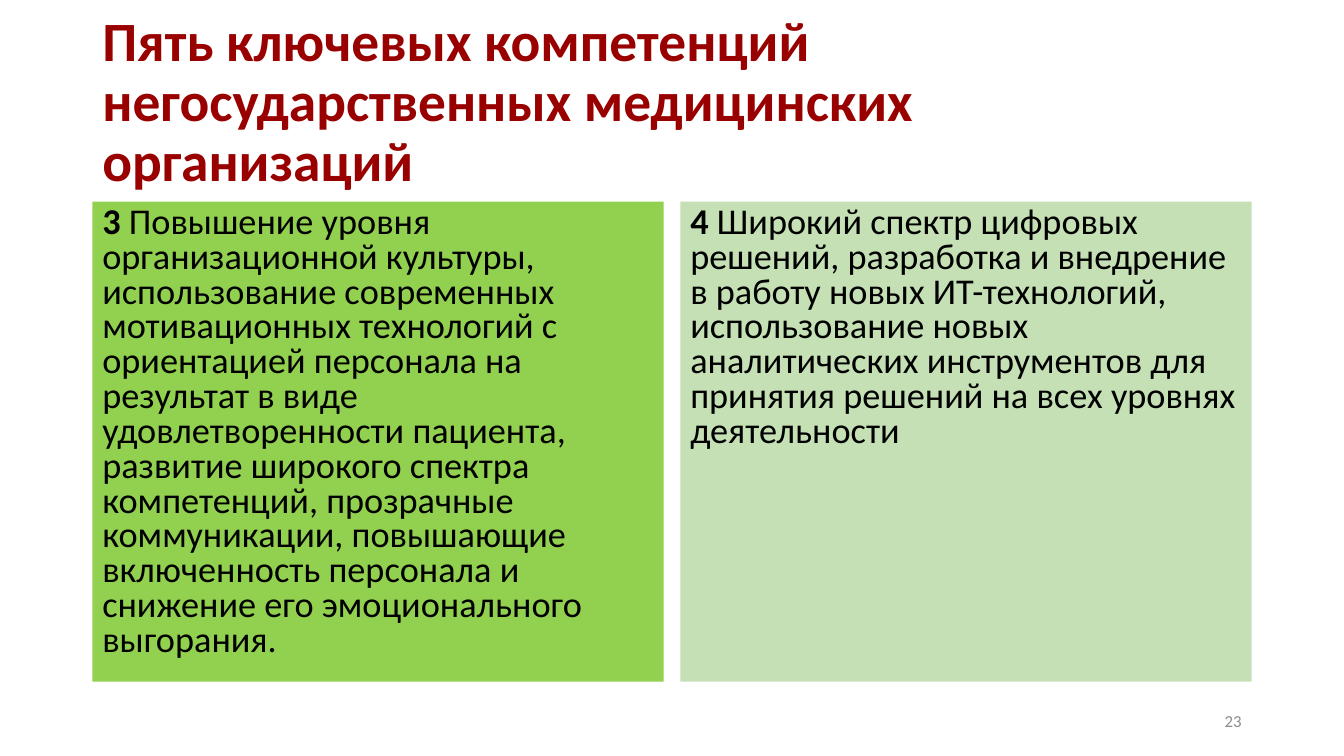
from dataclasses import dataclass
from typing import Optional

import pptx
import pptx.dml.color
import pptx.enum.shapes
import pptx.enum.text
import pptx.util

Pt = pptx.util.Pt
RGBColor = pptx.dml.color.RGBColor
Anchor = pptx.enum.text.MSO_ANCHOR
Align = pptx.enum.text.PP_ALIGN

DARK_RED = RGBColor(0x99, 0x00, 0x00)
BLACK = RGBColor(0x00, 0x00, 0x00)
GREY = RGBColor(0x8C, 0x8C, 0x8C)
GREEN = RGBColor(0x92, 0xD0, 0x50)
PALE_GREEN = RGBColor(0xC5, 0xE0, 0xB4)

LEFT = 66
PANEL_TOP = 144
PANEL_WIDTH = 408
PANEL_HEIGHT = 343
PANEL_STEP = 420


@dataclass
class Run:
    text: str
    bold: bool = False


@dataclass
class Block:
    left: float
    top: float
    width: float
    height: float
    runs: list[Run]
    size: float
    color: RGBColor
    para: dict
    anchor: Anchor = Anchor.MIDDLE
    fill: Optional[RGBColor] = None


@dataclass
class Competence:
    number: str
    text: str
    fill: RGBColor


COMPETENCES = [
    Competence(
        "3 ",
        "Повышение уровня организационной культуры, использование современных "
        "мотивационных технологий с ориентацией персонала на результат в виде "
        "удовлетворенности пациента, развитие широкого спектра компетенций, "
        "прозрачные коммуникации, повышающие включенность персонала и снижение "
        "его эмоционального выгорания.",
        GREEN,
    ),
    Competence(
        "4 ",
        "Широкий спектр цифровых решений, разработка и внедрение в работу новых "
        "ИТ-технологий, использование новых аналитических инструментов для "
        "принятия решений на всех уровнях деятельности",
        PALE_GREEN,
    ),
]


def set_attrs(obj: object, values: dict) -> None:
    for name, value in values.items():
        setattr(obj, name, value)


def draw_block(s: pptx.slide.Slide, block: Block) -> None:
    box = [Pt(v) for v in (block.left, block.top, block.width, block.height)]
    if block.fill is None:
        sp = s.shapes.add_textbox(*box)
    else:
        sp = s.shapes.add_shape(pptx.enum.shapes.MSO_SHAPE.RECTANGLE, *box)
        sp.shadow.inherit = False
        sp.fill.solid()
        sp.fill.fore_color.rgb = block.fill
        sp.line.fill.background()
    tf = sp.text_frame
    set_attrs(tf, {"word_wrap": True, "vertical_anchor": block.anchor})
    p = tf.paragraphs[0]
    set_attrs(p, {"alignment": Align.LEFT} | block.para)
    for run in block.runs:
        r = p.add_run()
        r.text = run.text
        set_attrs(r.font, {"name": "Calibri", "size": Pt(block.size), "bold": run.bold})
        r.font.color.rgb = block.color


def panel(index: int, item: Competence) -> Block:
    return Block(
        LEFT + index * PANEL_STEP, PANEL_TOP, PANEL_WIDTH, PANEL_HEIGHT,
        [Run(item.number, True), Run(item.text)], 25.9, BLACK,
        {"line_spacing": 0.8, "space_before": Pt(10)}, Anchor.TOP, item.fill,
    )


def main() -> None:
    prs = pptx.Presentation()
    set_attrs(prs, {"slide_width": Pt(960), "slide_height": Pt(540)})
    s = prs.slides.add_slide(prs.slide_layouts[6])
    title = Block(
        LEFT, 29, 810, 90,
        [Run("Пять ключевых компетенций негосударственных медицинских организаций", True)],
        39.6, DARK_RED, {"line_spacing": 0.9},
    )
    page_number = Block(
        678, 500.5, 216, 29, [Run("23")], 12, GREY, {"alignment": Align.RIGHT}
    )
    panels = [panel(i, item) for i, item in enumerate(COMPETENCES)]
    for block in [title, *panels, page_number]:
        draw_block(s, block)
    prs.save("out.pptx")


if __name__ == "__main__":
    main()
